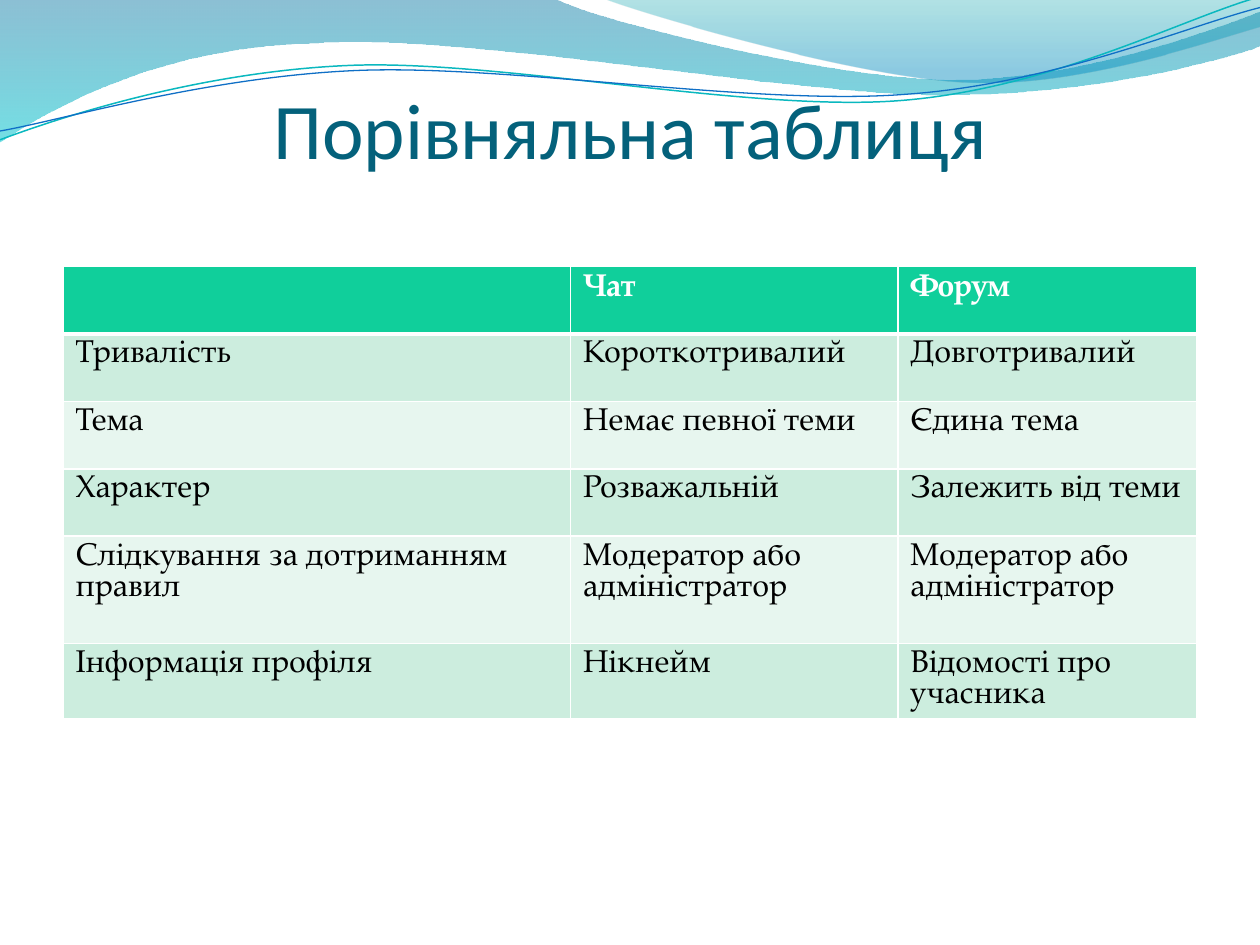
from lxml.etree import SubElement
from pptx import Presentation
from pptx.dml.color import RGBColor
from pptx.enum.text import MSO_ANCHOR, PP_ALIGN
from pptx.oxml.ns import qn
from pptx.util import Cm, Pt

WHITE = RGBColor(0xFF, 0xFF, 0xFF)
BLACK = RGBColor(0, 0, 0)
NAVY = RGBColor(0x04, 0x61, 0x7B)
GREEN = RGBColor(0x10, 0xCF, 0x9B)
MINT = RGBColor(0xCC, 0xED, 0xDE)
PALE = RGBColor(0xE7, 0xF6, 0xEF)
BLUE = RGBColor(0x0F, 0x6F, 0xC6)
TEAL = RGBColor(0x0A, 0xB8, 0xBF)

TITLE = "Порівняльна таблиця"
ROWS = [
    ("", "Чат", "Форум"),
    ("Тривалість", "Короткотривалий", "Довготривалий"),
    ("Тема", "Немає певної теми", "Єдина тема"),
    ("Характер", "Розважальній", "Залежить від теми"),
    ("Слідкування за дотриманням правил", "Модератор або адміністратор",
     "Модератор або адміністратор"),
    ("Інформація профіля", "Нікнейм", "Відомості про учасника"),
]
WIDTHS = [10.23, 6.6, 6.03]
HEIGHTS = [1.36] * 4 + [2.16, 1.52]

# Outlines in inches: a pair is a straight step, six numbers are a Bezier curve.
# Gradient stops: position, colour, opacity in percent.
WAVES = [
    ([(0, 0), (4.4, -0.01), (4.76, 0.17, 6.64, 0.63, 7.58, 0.63),
      (8.53, 0.63, 9.58, 0.26, 10, 0.09), (10.01, 0.36),
      (9.83, 0.44, 8.7, 0.76, 7.46, 0.75), (6.22, 0.75, 3.82, 0.28, 2.57, 0.34),
      (1.29, 0.36, 0.46, 0.83, -0.01, 1.13), (0, 0)],
     [(0, RGBColor(0, 0x74, 0xA1), 45), (1, RGBColor(0, 0xC6, 0xCF), 55)]),
    ([(4.79, -0.01), (5.09, 0.11, 6.82, 0.62, 7.69, 0.65),
      (8.56, 0.69, 9.61, 0.32, 10, 0.21), (10, 0), (4.79, -0.01)],
     [(0, RGBColor(0, 0xA1, 0xA9), 30), (0.8, RGBColor(0, 0x8B, 0xBF), 45)]),
]
LINES = [
    ([(0, 1.11), (0.48, 0.93, 1.58, 0.57, 2.77, 0.52),
      (3.95, 0.47, 5.93, 0.89, 7.13, 0.8), (8.33, 0.71, 9.38, 0.15, 9.98, -0.02)],
     TEAL, 0.85),
    ([(0, 1.04), (0.47, 0.96, 1.64, 0.61, 2.83, 0.56),
      (4.03, 0.51, 5.97, 0.84, 7.17, 0.75), (8.36, 0.67, 9.41, 0.21, 10, 0.06)],
     BLUE, 0.75),
]


def bend(shape, steps):
    """Join each three straight segments of a curve step into one Bezier curve."""
    legs = iter(list(shape.element.iter(qn("a:lnTo"))))
    for step in steps[1:]:
        leg = next(legs)
        if len(step) == 6:
            leg.tag = qn("a:cubicBezTo")
            for _ in range(2):
                extra = next(legs)
                leg.append(extra[0])
                extra.getparent().remove(extra)


def draw(shapes, steps, close):
    dots = [(Cm(2.54 * x), Cm(2.54 * y))
            for step in steps for x, y in zip(step[::2], step[1::2])]
    pen = shapes.build_freeform(*dots[0])
    pen.add_line_segments(dots[1:], close=close)
    shape = pen.convert_to_shape()
    bend(shape, steps)
    shape.shadow.inherit = False
    return shape


def add_wave(shapes, steps, stops):
    shape = draw(shapes, steps, True)
    shape.line.fill.background()
    shape.fill.gradient()
    shape.fill.gradient_angle = 270
    for stop, (place, color, _) in zip(shape.fill.gradient_stops, stops):
        stop.position = place
        stop.color.rgb = color
    for tint, (_, _, alpha) in zip(shape.element.spPr.iter(qn("a:srgbClr")), stops):
        SubElement(tint, qn("a:alpha"), val=str(alpha * 1000))


def add_line(shapes, steps, color, width):
    shape = draw(shapes, steps, False)
    shape.fill.background()
    shape.line.color.rgb = color
    shape.line.width = Pt(width)


def add_title(shapes):
    box = shapes.add_textbox(Cm(1.27), Cm(1.96), Cm(22.86), Cm(1.57))
    frame = box.text_frame
    frame.word_wrap = True
    frame.vertical_anchor = MSO_ANCHOR.BOTTOM
    frame.margin_left = frame.margin_right = frame.margin_bottom = 0
    frame.margin_top = Cm(0.13)
    para = frame.paragraphs[0]
    para.text = TITLE
    para.alignment = PP_ALIGN.CENTER
    para.font.name = "Calibri"
    para.font.size = Pt(45)
    para.font.color.rgb = NAVY


def set_edges(cell, row):
    """Draw white borders, thick between the header and the body."""
    thick = {0: "B", 1: "T"}.get(row)
    for side in "LRTB":
        width = Pt(3 if side == thick else 1)
        edge = SubElement(cell._tc.get_or_add_tcPr(), qn("a:ln" + side), w=str(width))
        SubElement(SubElement(edge, qn("a:solidFill")), qn("a:srgbClr"), val=str(WHITE))


def add_grid(shapes):
    grid = shapes.add_table(len(ROWS), len(WIDTHS), Cm(1.27), Cm(5.37),
                            Cm(sum(WIDTHS)), Cm(sum(HEIGHTS))).table
    for col, width in zip(grid.columns, WIDTHS):
        col.width = Cm(width)
    for r, (words, height) in enumerate(zip(ROWS, HEIGHTS)):
        grid.rows[r].height = Cm(height)
        for c, text in enumerate(words):
            cell = grid.cell(r, c)
            set_edges(cell, r)
            cell.fill.solid()
            cell.fill.fore_color.rgb = GREEN if r == 0 else MINT if r % 2 else PALE
            para = cell.text_frame.paragraphs[0]
            para.text = text
            para.line_spacing = Pt(18)
            para.font.name = "TeX Gyre Pagella"
            para.font.size = Pt(18)
            para.font.bold = r == 0
            para.font.color.rgb = BLACK if r else WHITE


def main():
    deck = Presentation()
    deck.slide_width, deck.slide_height = Cm(25.4), Cm(19.05)
    shapes = deck.slides.add_slide(deck.slide_layouts[6]).shapes
    for wave in WAVES:
        add_wave(shapes, *wave)
    for line in LINES:
        add_line(shapes, *line)
    add_title(shapes)
    add_grid(shapes)
    deck.save("out.pptx")


if __name__ == "__main__":
    main()
